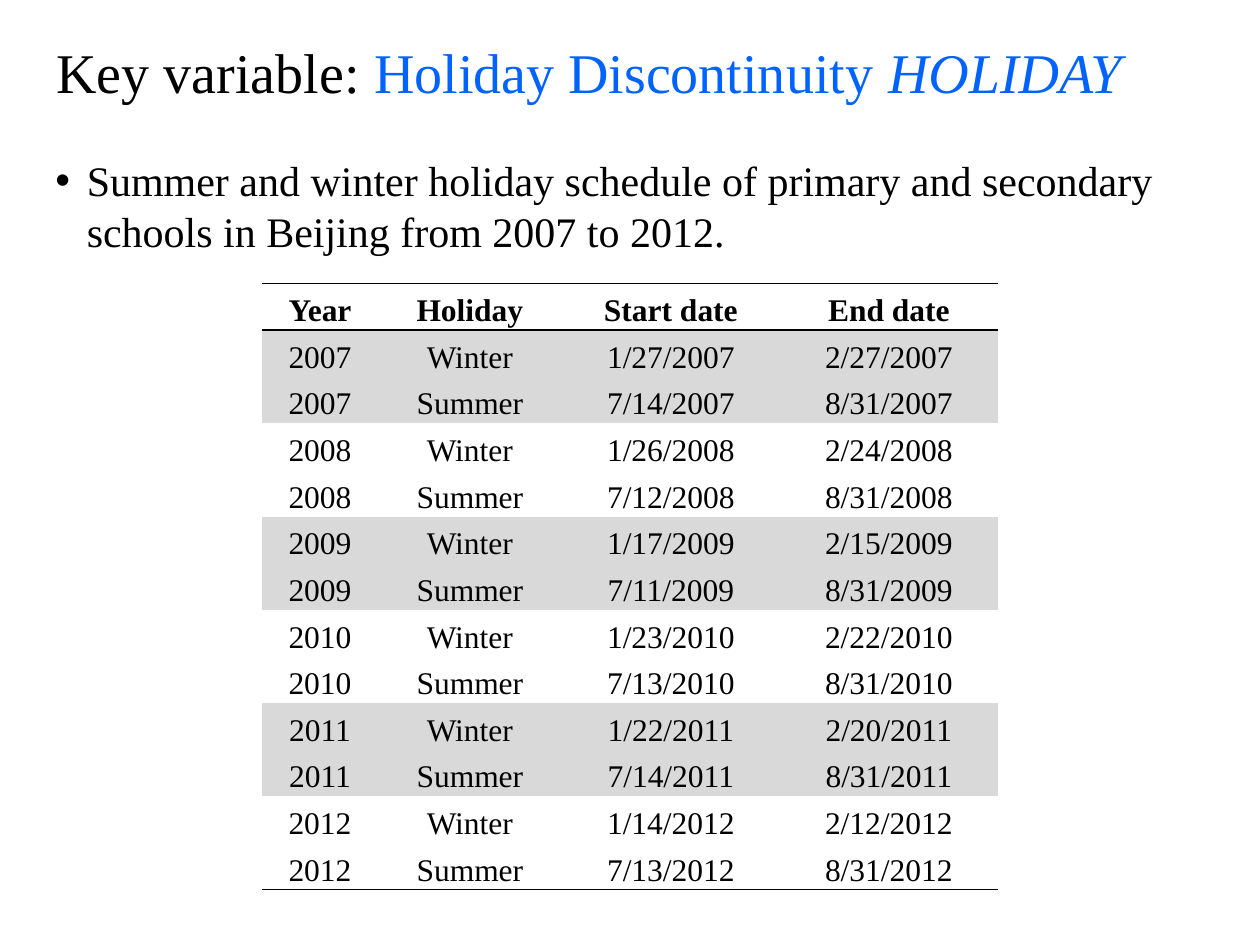
from lxml.etree import SubElement
from pptx import Presentation
from pptx.dml.color import RGBColor
from pptx.enum.text import MSO_ANCHOR, PP_ALIGN
from pptx.oxml.ns import qn
from pptx.util import Inches, Pt

BLACK, BLUE, GREY = "000000", "0063FE", "D9D9D9"
HEAD = ["Year", "Holiday", "Start date", "End date"]
DATES = {
    2007: ("1/27", "2/27", "7/14", "8/31"),
    2008: ("1/26", "2/24", "7/12", "8/31"),
    2009: ("1/17", "2/15", "7/11", "8/31"),
    2010: ("1/23", "2/22", "7/13", "8/31"),
    2011: ("1/22", "2/20", "7/14", "8/31"),
    2012: ("1/14", "2/12", "7/13", "8/31"),
}
WIDTHS = [0.92, 1.46, 1.73, 1.73]
ROW = 0.34


def rgb(code):
    return RGBColor.from_string(code)


def put(item, values):
    """Set each named attribute of item."""
    for name, value in values.items():
        setattr(item, name, value)


class Page:
    font = "Times New Roman"
    cell = {
        "vertical_anchor": MSO_ANCHOR.MIDDLE,
        "margin_left": Inches(0.01),
        "margin_right": Inches(0.01),
        "margin_top": Inches(0.01),
        "margin_bottom": 0,
    }

    def __init__(self, slide):
        self.slide = slide

    def run(self, para, text, size, color=BLACK, **style):
        run = para.add_run()
        run.text = text
        put(run.font, {"name": self.font, "size": Pt(size), **style})
        run.font.color.rgb = rgb(color)

    def text(self, box, runs, size, anchor, **style):
        """Add a text box of one paragraph and return the paragraph."""
        frame = self.slide.shapes.add_textbox(*map(Inches, box)).text_frame
        put(frame, {"word_wrap": True, "vertical_anchor": anchor})
        para = frame.paragraphs[0]
        put(para, style)
        for text, color, slant in runs:
            self.run(para, text, size, color, italic=slant)
        return para

    def bullet(self, para, indent):
        props = para._p.get_or_add_pPr()
        props.set("marL", str(Inches(indent)))
        props.set("indent", str(-Inches(indent)))
        SubElement(props, qn("a:buFont"), typeface="Arial")
        SubElement(props, qn("a:buChar"), char="•")

    def border(self, cell, ruled):
        """Rule the sides named in ruled and clear the others."""
        props = cell._tc.get_or_add_tcPr()
        for side in "LRTB":
            line = SubElement(props, qn("a:ln" + side), w=str(Pt(1)))
            if side in ruled:
                fill = SubElement(line, qn("a:solidFill"))
                SubElement(fill, qn("a:srgbClr"), val=BLACK)
            else:
                SubElement(line, qn("a:noFill"))

    def table(self, left, top, rows):
        size = sum(WIDTHS), ROW * len(rows)
        table = self.slide.shapes.add_table(
            len(rows), len(WIDTHS), *map(Inches, (left, top, *size))).table
        put(table, {"first_row": False, "horz_banding": False})
        for col, width in zip(table.columns, WIDTHS):
            col.width = Inches(width)
        last = len(rows) - 1
        rules = {0: "TB", 1: "T", last: "B"}
        for i, row in enumerate(rows):
            table.rows[i].height = Inches(ROW)
            for j, text in enumerate(row):
                cell = table.cell(i, j)
                put(cell, self.cell)
                self.border(cell, rules.get(i, ""))
                if i % 4 in (1, 2):
                    cell.fill.solid()
                    cell.fill.fore_color.rgb = rgb(GREY)
                else:
                    cell.fill.background()
                para = cell.text_frame.paragraphs[0]
                put(para, {"alignment": PP_ALIGN.CENTER, "line_spacing": 1.2})
                self.run(para, text, 18, bold=i == 0)


def main():
    deck = Presentation()
    put(deck, {"slide_width": Inches(10), "slide_height": Inches(7.5)})
    page = Page(deck.slides.add_slide(deck.slide_layouts[6]))

    title = [("Key variable: ", BLACK, False),
             ("Holiday Discontinuity ", BLUE, False),
             ("HOLIDAY", BLUE, True)]
    page.text((0.35, 0.14, 9.32, 0.91), title, 32, MSO_ANCHOR.MIDDLE,
              line_spacing=0.9)

    body = ("Summer and winter holiday schedule of primary and secondary "
            "schools in Beijing from 2007 to 2012.")
    para = page.text((0.34, 1.18, 9.32, 6.04), [(body, BLACK, False)], 24,
                     MSO_ANCHOR.TOP, space_before=Pt(10))
    page.bullet(para, 0.25)

    rows = [HEAD]
    for year, days in DATES.items():
        for name, pair in (("Winter", days[:2]), ("Summer", days[2:])):
            rows.append([str(year), name, *(f"{day}/{year}" for day in pair)])
    page.table(2.08, 2.25, rows)
    deck.save("out.pptx")


if __name__ == "__main__":
    main()
